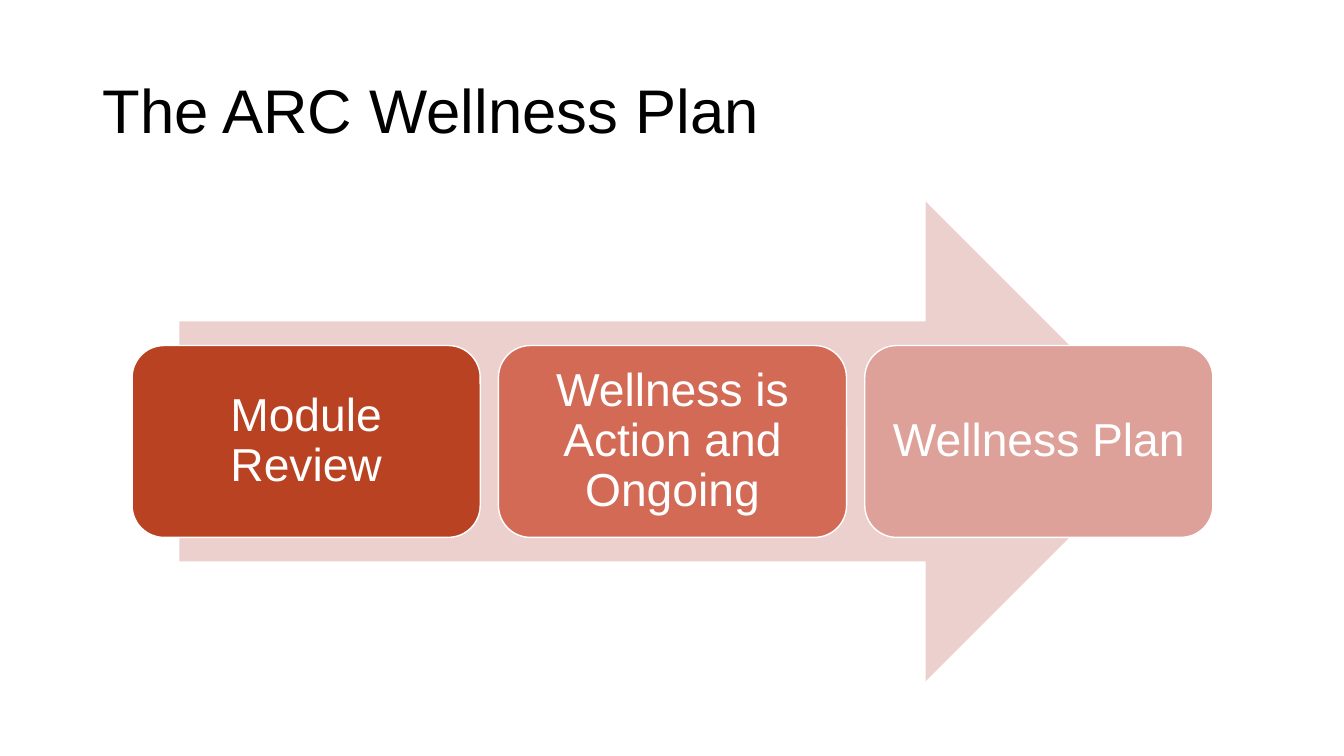
from pptx import Presentation
from pptx.dml.color import RGBColor
from pptx.enum.shapes import MSO_SHAPE
from pptx.enum.text import MSO_ANCHOR, PP_ALIGN
from pptx.util import Inches, Pt

FONT = "Arial"
STEPS = [
    ("Module Review", "B94223"),
    ("Wellness is Action and Ongoing", "D36A56"),
    ("Wellness Plan", "DDA19A"),
]


def rgb(color):
    return RGBColor.from_string(color)


def add_text(sp, text, size, color, align):
    tf = sp.text_frame
    tf.word_wrap = True
    tf.vertical_anchor = MSO_ANCHOR.MIDDLE
    p = tf.paragraphs[0]
    p.alignment = align
    p.line_spacing = 0.9
    r = p.add_run()
    r.text = text
    r.font.name = FONT
    r.font.size = Pt(size)
    r.font.color.rgb = rgb(color)
    return tf


def add_filled(s, kind, x, y, w, h, fill, line=None):
    sp = s.shapes.add_shape(kind, Inches(x), Inches(y), Inches(w), Inches(h))
    sp.shadow.inherit = False
    sp.fill.solid()
    sp.fill.fore_color.rgb = rgb(fill)
    if line:
        sp.line.color.rgb = rgb(line)
        sp.line.width = Pt(1)
    else:
        sp.line.fill.background()
    return sp


def add_title(s, x, y, w, h, text):
    sp = s.shapes.add_textbox(Inches(x), Inches(y), Inches(w), Inches(h))
    add_text(sp, text, 44, "000000", PP_ALIGN.LEFT)


def add_process(s, x, y, w, h, steps, gap=0.18, inset=0.47):
    add_filled(s, MSO_SHAPE.RIGHT_ARROW, x + inset, y, w - 2 * inset, h, "ECD0CD")
    step_w = (w - gap * (len(steps) - 1)) / len(steps)
    step_h = h * 0.4
    for i, (text, fill) in enumerate(steps):
        sp = add_filled(s, MSO_SHAPE.ROUNDED_RECTANGLE, x + i * (step_w + gap),
                        y + (h - step_h) / 2, step_w, step_h, fill, "FFFFFF")
        tf = add_text(sp, text, 33, "FFFFFF", PP_ALIGN.CENTER)
        tf.margin_left = tf.margin_right = Inches(0.14)
        tf.margin_top = tf.margin_bottom = Inches(0.14)


def main():
    prs = Presentation()
    prs.slide_width, prs.slide_height = Inches(13.33), Inches(7.5)
    s = prs.slides.add_slide(prs.slide_layouts[6])
    add_title(s, 0.92, 0.4, 11.5, 1.45, "The ARC Wellness Plan")
    add_process(s, 1.31, 2, 10.72, 4.76, STEPS)
    prs.save("out.pptx")


if __name__ == "__main__":
    main()
